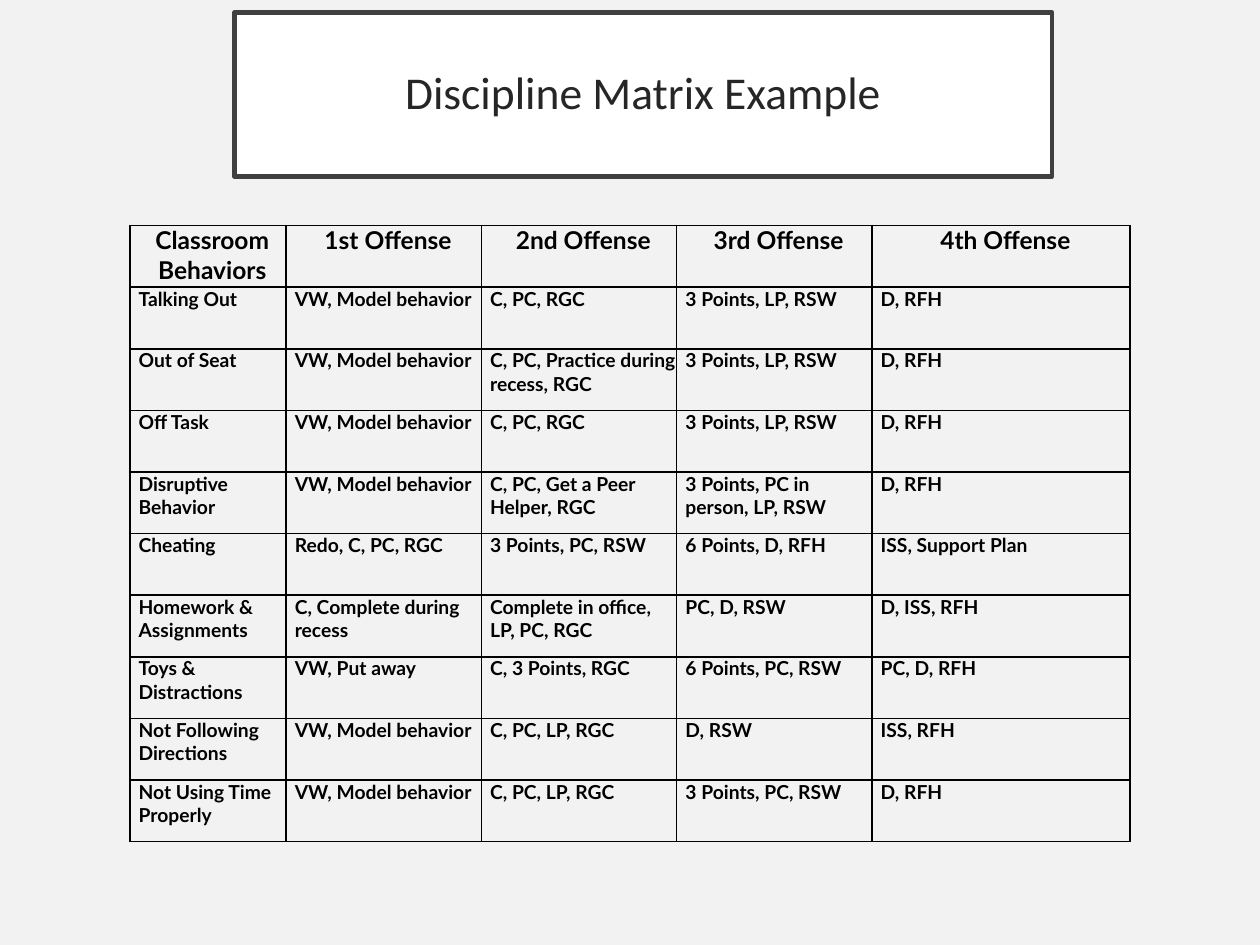
from dataclasses import dataclass

from lxml.etree import SubElement
from pptx import Presentation
from pptx.dml.color import RGBColor
from pptx.enum.text import MSO_ANCHOR, PP_ALIGN
from pptx.oxml.ns import qn
from pptx.util import Inches, Pt


@dataclass(frozen=True)
class Theme:
    """Colours, fonts and type sizes."""
    back: str = "F2F2F2"
    panel: str = "FFFFFF"
    frame: str = "404040"
    heading: str = "262626"
    ink: str = "000000"
    title_font: str = "Calibri"
    table_font: str = "Lato"
    title_size: int = 26
    header_size: int = 14
    body_size: int = 11
    frame_width: float = 2.5
    grid_width: float = 1


COLUMNS = (1.24, 1.55, 1.55, 1.55, 2.05)
HEADER = ("Classroom Behaviors", "1st Offense", "2nd Offense",
          "3rd Offense", "4th Offense")
WARN = "VW, Model behavior"
ROWS = (
    ("Talking Out", WARN, "C, PC, RGC", "3 Points, LP, RSW", "D, RFH"),
    ("Out of Seat", WARN, "C, PC, Practice during recess, RGC",
     "3 Points, LP, RSW", "D, RFH"),
    ("Off Task", WARN, "C, PC, RGC", "3 Points, LP, RSW", "D, RFH"),
    ("Disruptive Behavior", WARN, "C, PC, Get a Peer Helper, RGC",
     "3 Points, PC in person, LP, RSW", "D, RFH"),
    ("Cheating", "Redo, C, PC, RGC", "3 Points, PC, RSW",
     "6 Points, D, RFH", "ISS, Support Plan"),
    ("Homework & Assignments", "C, Complete during recess",
     "Complete in office, LP, PC, RGC", "PC, D, RSW", "D, ISS, RFH"),
    ("Toys & Distractions", "VW, Put away", "C, 3 Points, RGC",
     "6 Points, PC, RSW", "PC, D, RFH"),
    ("Not Following Directions", WARN, "C, PC, LP, RGC", "D, RSW", "ISS, RFH"),
    ("Not Using Time Properly", WARN, "C, PC, LP, RGC",
     "3 Points, PC, RSW", "D, RFH"),
)


def color(code):
    return RGBColor.from_string(code)


def write(frame, text, *, font, size, ink, bold=False, align=PP_ALIGN.LEFT,
          before=0, indent=0, spacing=None):
    """Put one formatted paragraph into a text frame."""
    par = frame.paragraphs[0]
    par.alignment = align
    par.space_before = Pt(before)
    par.line_spacing = spacing
    props = par._p.get_or_add_pPr()
    props.set("marL", str(Inches(indent)))
    props.set("indent", "0")
    run = par.add_run()
    run.text = text
    run.font.name = font
    run.font.size = Pt(size)
    run.font.bold = bold
    run.font.color.rgb = color(ink)


class Page:
    """The current slide and its style."""

    def __init__(self, slide, theme):
        self.slide = slide
        self.theme = theme
        fill = slide.background.fill
        fill.solid()
        fill.fore_color.rgb = color(theme.back)

    def title(self, text, left, top, width, height):
        look = self.theme
        box = self.slide.shapes.title
        box.left, box.top = Inches(left), Inches(top)
        box.width, box.height = Inches(width), Inches(height)
        box.fill.solid()
        box.fill.fore_color.rgb = color(look.panel)
        box.line.color.rgb = color(look.frame)
        box.line.width = Pt(look.frame_width)
        frame = box.text_frame
        frame.word_wrap = True
        frame.vertical_anchor = MSO_ANCHOR.MIDDLE
        frame.margin_left = frame.margin_right = Inches(0.2)
        frame.margin_top = frame.margin_bottom = Inches(0.2)
        write(frame, text, font=look.title_font, size=look.title_size,
              ink=look.heading, align=PP_ALIGN.CENTER, spacing=0.9)

    def border(self, cell):
        props = cell._tc.get_or_add_tcPr()
        for side in ("lnL", "lnR", "lnT", "lnB"):
            line = SubElement(props, qn(f"a:{side}"),
                              w=str(Pt(self.theme.grid_width)))
            fill = SubElement(line, qn("a:solidFill"))
            SubElement(fill, qn("a:srgbClr"), val=self.theme.ink)

    def cell(self, cell, text, head):
        look = self.theme
        self.border(cell)
        cell.fill.background()
        cell.margin_left = cell.margin_right = 0
        cell.margin_top = cell.margin_bottom = 0
        write(cell.text_frame, text, font=look.table_font,
              size=look.header_size if head else look.body_size,
              ink=look.ink, bold=True, before=5, indent=0.07,
              align=PP_ALIGN.CENTER if head else PP_ALIGN.LEFT)

    def table(self, rows, widths, left, top, height):
        table = self.slide.shapes.add_table(
            len(rows), len(widths), Inches(left), Inches(top),
            Inches(sum(widths)), Inches(height)).table
        table.horz_banding = False
        table.first_row = False
        for column, width in zip(table.columns, widths):
            column.width = Inches(width)
        for r, row in enumerate(rows):
            for c, text in enumerate(row):
                self.cell(table.cell(r, c), text, head=r == 0)


def main():
    deck = Presentation()
    deck.slide_width, deck.slide_height = Inches(10), Inches(7.5)
    page = Page(deck.slides.add_slide(deck.slide_layouts[5]), Theme())

    # Framed heading
    page.title("Discipline Matrix Example", 1.86, 0.1, 6.49, 1.3)

    # Behaviors by number of offenses
    page.table((HEADER, *ROWS), COLUMNS, 1.03, 1.79, 4.89)

    deck.save("out.pptx")


if __name__ == "__main__":
    main()
